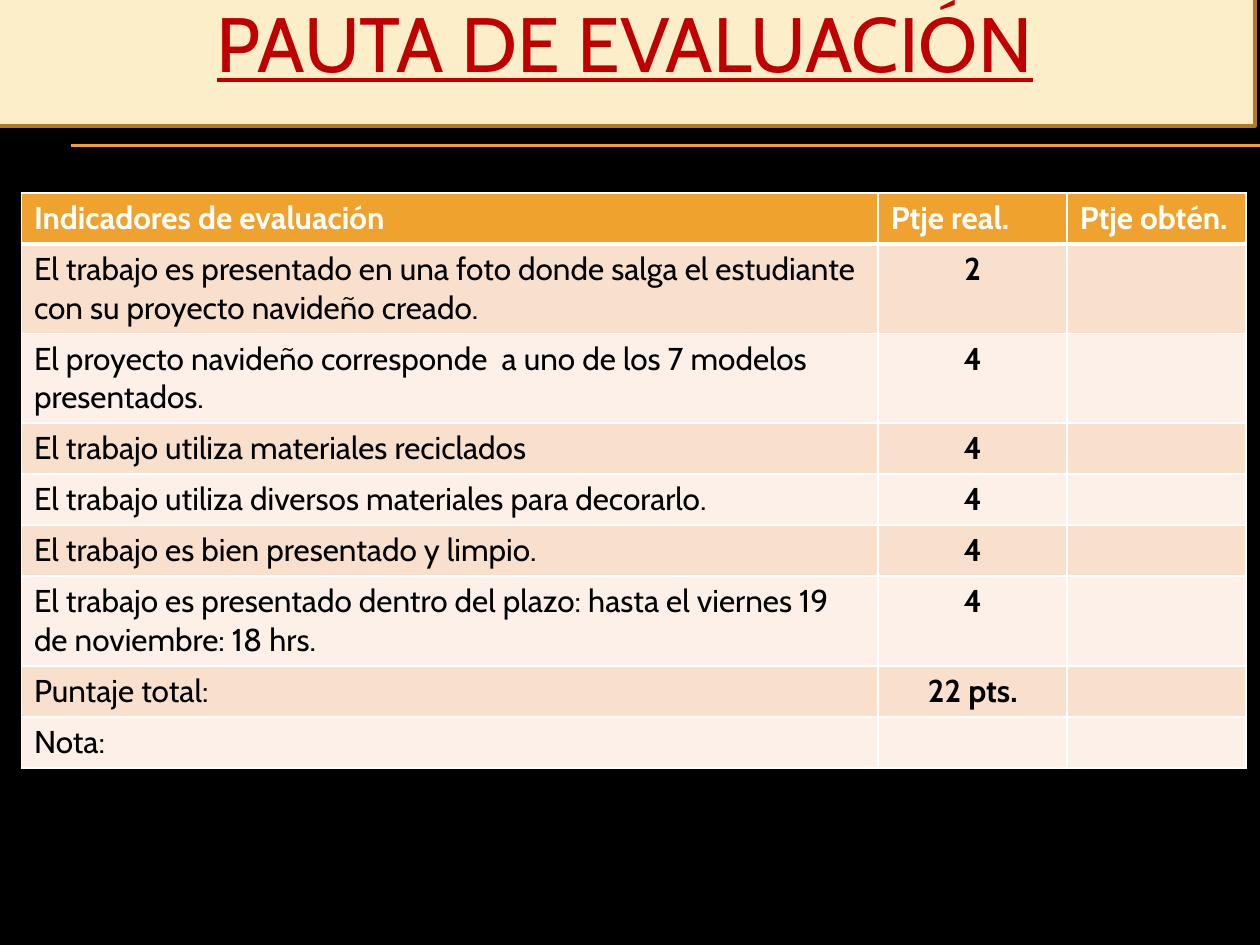
from lxml import etree
from pptx import Presentation
from pptx.dml.color import RGBColor
from pptx.enum.shapes import MSO_CONNECTOR
from pptx.enum.text import MSO_ANCHOR, MSO_AUTO_SIZE, PP_ALIGN
from pptx.oxml.ns import qn
from pptx.util import Inches, Pt

STRAIGHT = MSO_CONNECTOR.STRAIGHT
MIDDLE = MSO_ANCHOR.MIDDLE
NO_AUTOFIT = MSO_AUTO_SIZE.NONE
LEFT, CENTER = PP_ALIGN.LEFT, PP_ALIGN.CENTER

BLACK = RGBColor(0x00, 0x00, 0x00)
WHITE = RGBColor(0xFF, 0xFF, 0xFF)
ORANGE = RGBColor(0xF0, 0xA2, 0x2E)
PEACH = RGBColor(0xF9, 0xE0, 0xCD)
PALE_PEACH = RGBColor(0xFC, 0xF0, 0xE8)
CREAM = RGBColor(0xFB, 0xEE, 0xC9)
BROWN = RGBColor(0xB2, 0x78, 0x22)
RED = RGBColor(0xC0, 0x00, 0x00)

FONT = "Cabin"
COL_WIDTHS = (6.8, 1.5, 1.42)
ROW_HEIGHT = 0.4
HEADERS = ("Indicadores de evaluación", "Ptje real.", "Ptje obtén.")
CRITERIA = (
    ("El trabajo es presentado en una foto donde salga el estudiante con su proyecto navideño creado.", "2"),
    ("El proyecto navideño corresponde  a uno de los 7 modelos presentados.", "4"),
    ("El trabajo utiliza materiales reciclados", "4"),
    ("El trabajo utiliza diversos materiales para decorarlo.", "4"),
    ("El trabajo es bien presentado y limpio.", "4"),
    ("El trabajo es presentado dentro del plazo: hasta el viernes 19 de noviembre: 18 hrs.", "4"),
    ("Puntaje total:", "22 pts."),
    ("Nota:", ""),
)


def write_text(tf, text, size=18, color=BLACK, bold=False, underline=False, align=LEFT):
    p = tf.paragraphs[0]
    p.alignment = align
    r = p.add_run()
    r.text = text
    r.font.name = FONT
    r.font.size = Pt(size)
    r.font.bold = bold
    r.font.underline = underline
    r.font.color.rgb = color


def add_rule(slide, y):
    line = slide.shapes.add_connector(STRAIGHT, Inches(0.56), Inches(y), Inches(10), Inches(y))
    line.line.color.rgb = ORANGE
    line.line.width = Pt(0.75)
    etree.SubElement(line._element.spPr, qn("a:effectLst"))


def set_borders(cell, **widths):
    tc_pr = cell._tc.get_or_add_tcPr()
    for side in "LRTB":
        ln = etree.SubElement(tc_pr, qn(f"a:ln{side}"), w=str(Pt(widths.get(side, 1))))
        fill = etree.SubElement(ln, qn("a:solidFill"))
        etree.SubElement(fill, qn("a:srgbClr"), val=str(WHITE))


def format_cell(cell, fill, **borders):
    set_borders(cell, **borders)
    cell.fill.solid()
    cell.fill.fore_color.rgb = fill


def add_rubric(slide):
    rows = len(CRITERIA) + 1
    table = slide.shapes.add_table(
        rows, len(COL_WIDTHS), Inches(0.17), Inches(1.53),
        Inches(sum(COL_WIDTHS)), Inches(ROW_HEIGHT * rows)).table
    for column, width in zip(table.columns, COL_WIDTHS):
        column.width = Inches(width)
    for row in table.rows:
        row.height = Inches(ROW_HEIGHT)

    for col, header in enumerate(HEADERS):
        cell = table.cell(0, col)
        format_cell(cell, ORANGE, B=3)
        write_text(cell.text_frame, header, color=WHITE, bold=True)

    for row, (criterion, points) in enumerate(CRITERIA, 1):
        for col in range(len(COL_WIDTHS)):
            format_cell(table.cell(row, col), PEACH if row % 2 else PALE_PEACH,
                        T=3 if row == 1 else 1)
        write_text(table.cell(row, 0).text_frame, criterion)
        if points:
            write_text(table.cell(row, 1).text_frame, points, bold=True, align=CENTER)


def format_title(slide):
    sp = slide.shapes.title
    sp.left, sp.top = Inches(-0.04), Inches(-0.34)
    sp.width, sp.height = Inches(10), Inches(1.34)
    sp.fill.solid()
    sp.fill.fore_color.rgb = CREAM
    sp.line.color.rgb = BROWN
    sp.line.width = Pt(2)
    tf = sp.text_frame
    tf.auto_size = NO_AUTOFIT
    tf.word_wrap = True
    tf.vertical_anchor = MIDDLE
    write_text(tf, "PAUTA DE EVALUACIÓN", size=44, color=RED, underline=True, align=CENTER)


def main():
    prs = Presentation()
    prs.slide_width, prs.slide_height = Inches(10), Inches(7.5)
    slide = prs.slides.add_slide(prs.slide_layouts[5])
    slide.background.fill.solid()
    slide.background.fill.fore_color.rgb = BLACK
    for y in (1.15, 1.16):
        add_rule(slide, y)
    add_rubric(slide)
    format_title(slide)
    prs.save("out.pptx")


if __name__ == "__main__":
    main()
